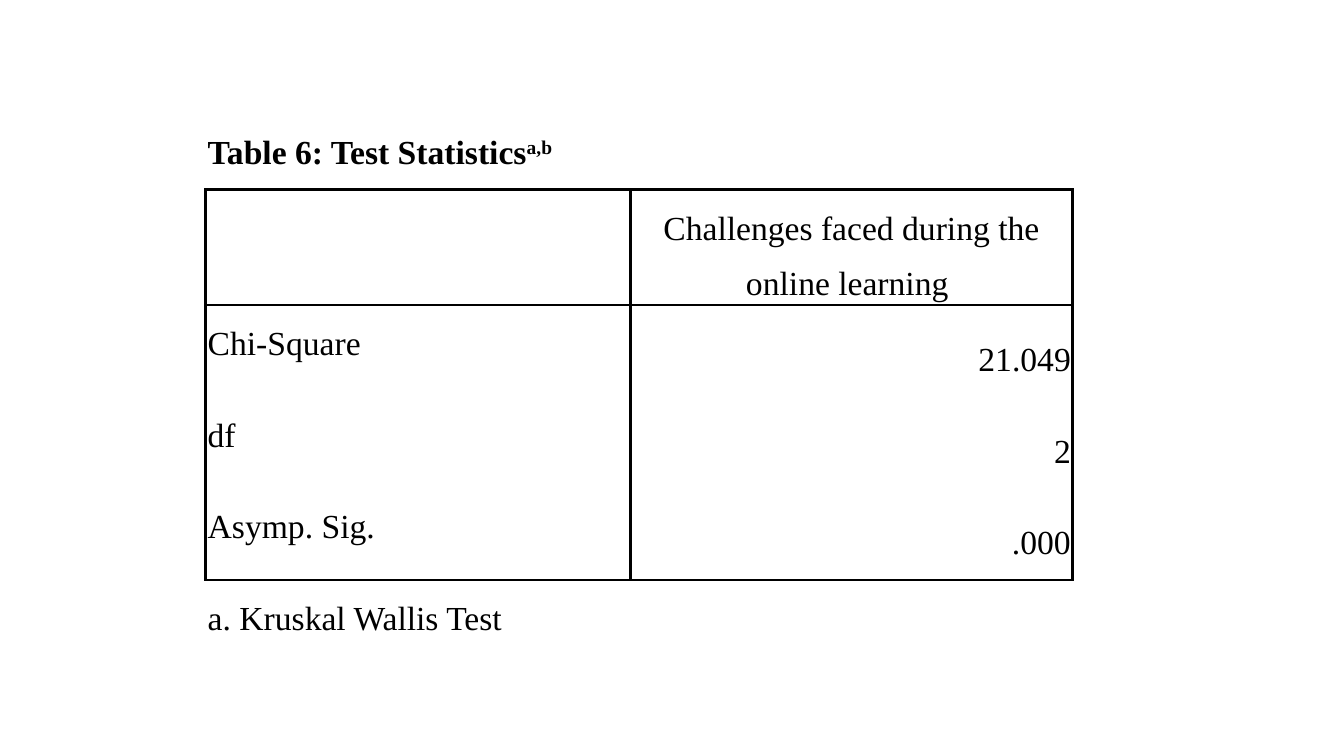
from lxml import etree
from pptx import Presentation
from pptx import util as u
from pptx.dml.color import RGBColor
from pptx.enum import text
from pptx.oxml import ns

COLORS = {"ink": "000000", "paper": "FFFFFF"}
FONT_NAME = "Times New Roman"
STATISTICS = [("Chi-Square", "21.049"), ("df", "2"), ("Asymp. Sig.", ".000")]
FIRST, LAST = 2, 4


def style_cell(cell, edges=""):
    """Fill a cell and rule the named edges, leaving the others bare."""
    cell.fill.solid()
    cell.fill.fore_color.rgb = RGBColor.from_string(COLORS["paper"])
    properties = cell._tc.get_or_add_tcPr()
    for index, edge in enumerate("LRTB"):
        line = etree.Element(ns.qn(f"a:ln{edge}"), w=str(u.Pt(2.25)))
        if edge in edges:
            fill = etree.SubElement(line, ns.qn("a:solidFill"))
            etree.SubElement(fill, ns.qn("a:srgbClr"), val=COLORS["ink"])
        else:
            etree.SubElement(line, ns.qn("a:noFill"))
        properties.insert(index, line)


def write_cell(cell, words, align="LEFT", anchor="TOP", bold=False):
    """Write one paragraph in a cell and return it."""
    cell.margin_left = cell.margin_right = u.Inches(0.02)
    cell.margin_top = cell.margin_bottom = u.Inches(0.02)
    cell.vertical_anchor = text.MSO_ANCHOR[anchor]
    paragraph = cell.text_frame.paragraphs[0]
    paragraph.alignment = text.PP_ALIGN[align]
    paragraph.line_spacing = 1.5
    add_run(paragraph, words, bold)
    return paragraph


def add_run(paragraph, words, bold):
    """Add a run in the table's type and return it."""
    run = paragraph.add_run()
    run.text = words
    run.font.name = FONT_NAME
    run.font.size = u.Pt(24)
    run.font.bold = bold
    run.font.color.rgb = RGBColor.from_string(COLORS["ink"])
    return run


def add_statistics_table(slide):
    """Add the empty ruled table with its merged title and note rows."""
    frame = slide.shapes.add_table(6, 2, u.Inches(2.04), u.Inches(0.97),
                                   u.Inches(8.6), u.Inches(5.46))
    table = frame.table
    table.first_row = table.horz_banding = False
    for column, width in zip(table.columns, (4.21, 4.39)):
        column.width = u.Inches(width)
    for number, row in enumerate(table.rows):
        row.height = u.Inches(0.91)
        edges = {0: "B", 1: "LRTB", FIRST: "LRT", LAST: "LRB", 5: "T"}.get(number, "LR")
        for cell in row.cells:
            style_cell(cell, edges)
    for number in (0, 5):
        table.cell(number, 0).merge(table.cell(number, 1))
    return table


def main():
    """Build and save the slide."""
    presentation = Presentation()
    presentation.slide_width = u.Inches(13.33)
    presentation.slide_height = u.Inches(7.5)
    slide = presentation.slides.add_slide(presentation.slide_layouts[6])
    table = add_statistics_table(slide)
    title = write_cell(table.cell(0, 0), "Table 6: Test Statistics", anchor="MIDDLE", bold=True)
    marks = add_run(title, "a,b", True)
    marks.font._element.set("baseline", "30000")
    write_cell(table.cell(1, 1), "Challenges faced during the online learning ", "CENTER", "BOTTOM")
    for number, (label, value) in enumerate(STATISTICS, FIRST):
        write_cell(table.cell(number, 0), label)
        write_cell(table.cell(number, 1), value, "RIGHT", "MIDDLE")
    write_cell(table.cell(5, 0), "a. Kruskal Wallis Test")
    presentation.save("out.pptx")


if __name__ == "__main__":
    main()
